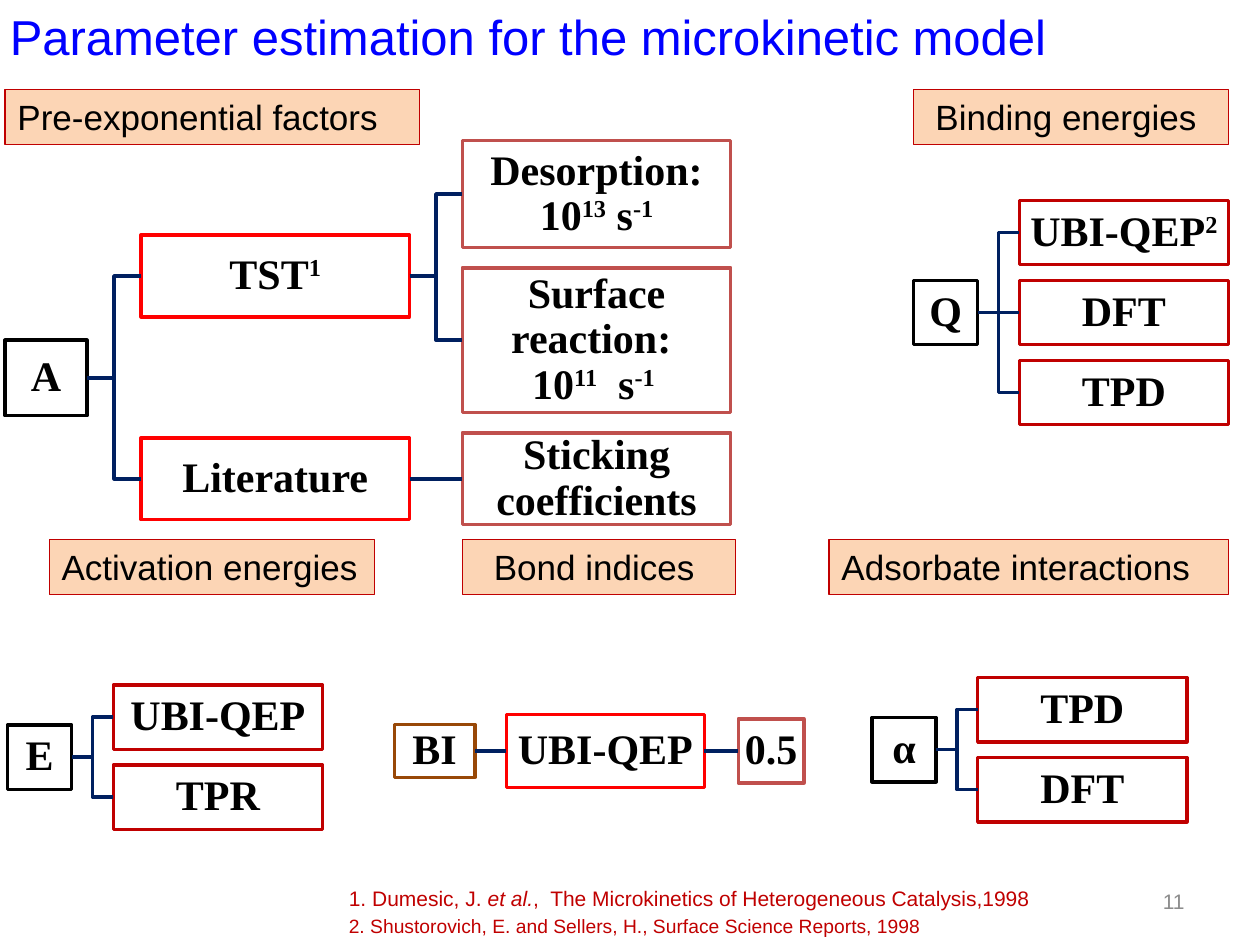
from dataclasses import dataclass

from lxml import etree
from pptx import Presentation
from pptx.dml.color import RGBColor
from pptx.enum.shapes import MSO_CONNECTOR, MSO_SHAPE
from pptx.enum.text import MSO_ANCHOR, PP_ALIGN
from pptx.oxml.ns import qn
from pptx.util import Inches, Pt

RECTANGLE = MSO_SHAPE.RECTANGLE
STRAIGHT, ELBOW = MSO_CONNECTOR.STRAIGHT, MSO_CONNECTOR.ELBOW
TOP, MIDDLE = MSO_ANCHOR.TOP, MSO_ANCHOR.MIDDLE
LEFT, CENTER, RIGHT = PP_ALIGN.LEFT, PP_ALIGN.CENTER, PP_ALIGN.RIGHT
LEFT_SITE, RIGHT_SITE = 1, 3


@dataclass(frozen=True)
class Theme:
    sans: str = "Arial"
    serif: str = "Times New Roman"
    black: str = "000000"
    title: str = "0000FF"
    header_fill: str = "FCD5B5"
    dark_red: str = "C00000"
    red: str = "FF0000"
    rose: str = "C0504D"
    brown: str = "984807"
    navy: str = "002060"
    gray: str = "8C8C8C"
    title_size: int = 28
    node_size: int = 24
    header_size: int = 20
    note_size: int = 12
    small_note_size: int = 11
    line: float = 2
    thin_line: float = 0.75


THEME = Theme()


def color(value):
    return RGBColor.from_string(value)


def style_font(paragraph, name, size, value, bold=False):
    font = paragraph.font
    font.name, font.size, font.bold = name, Pt(size), bold
    font.color.rgb = color(value)


def add_marked_runs(paragraph, text, marker):
    marked = []
    for index, part in enumerate(text.split(marker)):
        for line_index, line in enumerate(part.split("\n")):
            if line_index:
                paragraph.add_line_break()
            if line:
                run = paragraph.add_run()
                run.text = line
                if index % 2:
                    marked.append(run)
    return marked


def add_box(slide, left, top, width, height, line, weight, fill=None):
    shape = slide.shapes.add_shape(
        RECTANGLE, Inches(left), Inches(top), Inches(width), Inches(height)
    )
    shape.shadow.inherit = False
    shape.line.color.rgb = color(line)
    shape.line.width = Pt(weight)
    if fill:
        shape.fill.solid()
        shape.fill.fore_color.rgb = color(fill)
    else:
        shape.fill.background()
    shape.text_frame.word_wrap = True
    return shape


def add_header(slide, text, left, top, width, alignment=LEFT):
    shape = add_box(slide, left, top, width, 0.44, THEME.dark_red,
                    THEME.thin_line, THEME.header_fill)
    shape.text_frame.vertical_anchor = TOP
    paragraph = shape.text_frame.paragraphs[0]
    paragraph.text = text
    paragraph.alignment = alignment
    style_font(paragraph, THEME.sans, THEME.header_size, THEME.black)


def add_node(slide, text, left, middle, width, height, line):
    shape = add_box(slide, left, middle - height / 2, width, height, line, THEME.line)
    frame = shape.text_frame
    frame.vertical_anchor = MIDDLE
    frame.margin_left = frame.margin_right = Inches(0.02)
    frame.margin_top = frame.margin_bottom = Inches(0.02)
    paragraph = frame.paragraphs[0]
    paragraph.alignment = CENTER
    paragraph.line_spacing = 0.9
    style_font(paragraph, THEME.serif, THEME.node_size, THEME.black, bold=True)
    for run in add_marked_runs(paragraph, text, "^"):
        run.font._element.set("baseline", "30000")
    return shape


def link(slide, parent, child):
    start = parent.top + parent.height // 2
    end = child.top + child.height // 2
    level = abs(start - end) < Inches(0.01)
    connector = slide.shapes.add_connector(
        STRAIGHT if level else ELBOW,
        parent.left + parent.width, start, child.left, end,
    )
    connector.begin_connect(parent, RIGHT_SITE)
    connector.end_connect(child, LEFT_SITE)
    connector.line.color.rgb = color(THEME.navy)
    connector.line.width = Pt(THEME.line)
    etree.SubElement(connector._element.spPr, qn("a:effectLst"))


def add_method_tree(slide, symbol, methods, left, middle):
    root = add_node(slide, symbol, left, middle, 0.51, 0.51, THEME.black)
    pitch = 0.635
    first = middle - pitch * (len(methods) - 1) / 2
    for index, method in enumerate(methods):
        child = add_node(slide, method, left + 0.84, first + pitch * index,
                         1.66, 0.51, THEME.dark_red)
        link(slide, root, child)


def add_factor_tree(slide):
    root = add_node(slide, "A", 0.04, 3, 0.65, 0.6, THEME.black)
    branches = [
        ("TST^1^", 2.19, [
            ("Desorption: 10^13^ s^-1^", 1.54, 0.85),
            ("Surface reaction: \n10^11^  s^-1 ^", 2.7, 1.15),
        ]),
        ("Literature", 3.8, [("Sticking coefficients", 3.8, 0.73)]),
    ]
    for text, middle, leaves in branches:
        branch = add_node(slide, text, 1.12, middle, 2.13, 0.65, THEME.red)
        link(slide, root, branch)
        for leaf_text, leaf_middle, height in leaves:
            leaf = add_node(slide, leaf_text, 3.67, leaf_middle, 2.13, height, THEME.rose)
            link(slide, branch, leaf)


def add_bond_chain(slide):
    steps = [
        ("BI", 3.13, 0.64, 0.42, THEME.brown),
        ("UBI-QEP", 4.02, 1.57, 0.58, THEME.red),
        ("0.5", 5.86, 0.52, 0.51, THEME.rose),
    ]
    nodes = [add_node(slide, text, left, 5.96, width, height, line)
             for text, left, width, height, line in steps]
    for parent, child in zip(nodes, nodes[1:]):
        link(slide, parent, child)


def add_text(slide, text, left, top, width, height, size, value,
             alignment=LEFT, anchor=TOP):
    shape = slide.shapes.add_textbox(
        Inches(left), Inches(top), Inches(width), Inches(height)
    )
    shape.text_frame.word_wrap = True
    shape.text_frame.vertical_anchor = anchor
    paragraph = shape.text_frame.paragraphs[0]
    paragraph.alignment = alignment
    style_font(paragraph, THEME.sans, size, value)
    for run in add_marked_runs(paragraph, text, "|"):
        run.font.italic = True


def main():
    presentation = Presentation()
    presentation.slide_width, presentation.slide_height = Inches(10), Inches(7.5)
    slide = presentation.slides.add_slide(presentation.slide_layouts[6])

    add_text(slide, "Parameter estimation for the microkinetic model",
             -0.02, 0, 10, 0.57, THEME.title_size, THEME.title)

    add_header(slide, "Pre-exponential factors", 0.04, 0.71, 3.29)
    add_header(slide, "Binding energies ", 7.25, 0.71, 2.5, CENTER)
    add_header(slide, "Activation energies", 0.39, 4.28, 2.58)
    add_header(slide, "Bond indices ", 3.67, 4.28, 2.17, CENTER)
    add_header(slide, "Adsorbate interactions", 6.58, 4.28, 3.17)

    add_factor_tree(slide)
    add_method_tree(slide, "Q", ["UBI-QEP^2^", "DFT", "TPD"], 7.25, 2.48)
    add_method_tree(slide, "E", ["UBI-QEP", "TPR"], 0.06, 6.01)
    add_method_tree(slide, "α", ["TPD", "DFT"], 6.92, 5.95)
    add_bond_chain(slide)

    add_text(slide, "1. Dumesic, J. |et al.|,  The Microkinetics of Heterogeneous Catalysis,1998",
             2.67, 6.98, 6.25, 0.3, THEME.note_size, THEME.dark_red)
    add_text(slide, "2. Shustorovich, E. and Sellers, H., Surface Science Reports, 1998",
             2.67, 7.21, 6.04, 0.29, THEME.small_note_size, THEME.dark_red)
    add_text(slide, "11", 7.17, 6.95, 2.33, 0.4, THEME.note_size, THEME.gray, RIGHT, MIDDLE)

    presentation.save("out.pptx")


if __name__ == "__main__":
    main()
